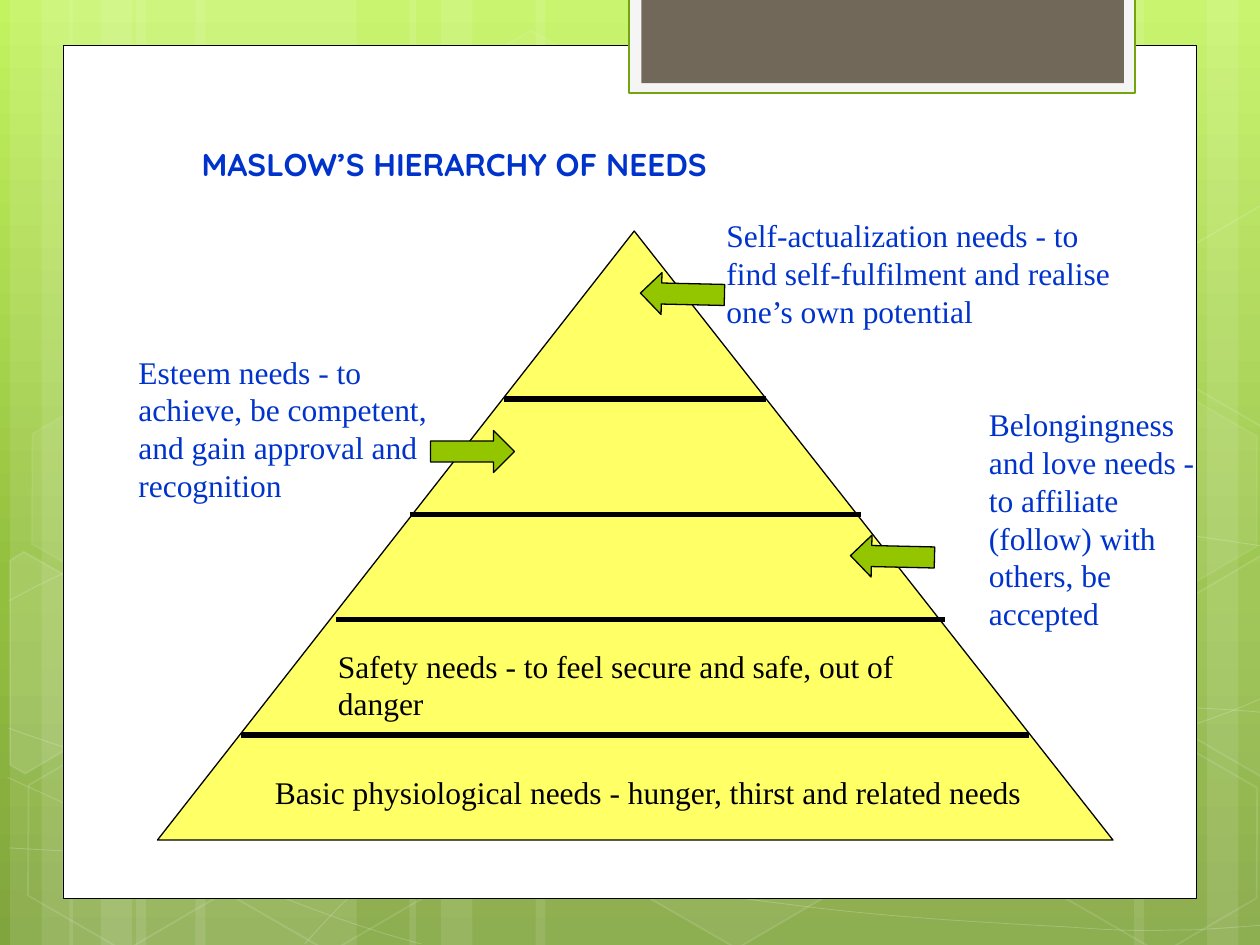
from copy import deepcopy

from lxml.etree import SubElement
from pptx import Presentation
from pptx.dml.color import RGBColor
from pptx.enum.shapes import MSO_CONNECTOR as Connector, MSO_SHAPE as Preset
from pptx.enum.text import MSO_ANCHOR as Anchor, MSO_AUTO_SIZE as AutoSize, PP_ALIGN as Align
from pptx.oxml.ns import qn
from pptx.util import Inches, Pt

WHITE = RGBColor(0xFF, 0xFF, 0xFF)
BLACK = RGBColor(0x00, 0x00, 0x00)
BLUE = RGBColor(0x00, 0x33, 0xCC)
YELLOW = RGBColor(0xFF, 0xFF, 0x66)
GREEN = RGBColor(0x94, 0xC6, 0x00)
TAB_EDGE = RGBColor(0x74, 0xA5, 0x10)
TAB_PALE = RGBColor(0xF5, 0xF5, 0xF5)
TAB_BROWN = RGBColor(0x71, 0x68, 0x5A)
BACKDROP = [(0, RGBColor(0xC3, 0xF3, 0x5F)), (0.62, RGBColor(0x93, 0xBF, 0x3F)),
            (1, RGBColor(0x81, 0xA5, 0x3E))]

STRIPES = [(1.08, 1.75), (0.08, 0.5), (0.33, 0.83), (1.55, 1.75), (0.55, 0.5), (0.8, 0.83),
           (7.33, 1.75), (9.58, 0.5), (9, 0.83), (4.25, 3.08), (3.25, 0.5), (3.5, 0.83)]
WAVES = [
    [(0.07, 6.73), (0.61, 6.76), (1.15, 6.79), (1.9, 6.78), (2.65, 6.77), (3.58, 6.75),
     (4.58, 6.65), (5.58, 6.55), (7, 6.36), (7.92, 6.17), (8.83, 5.98), (9.77, 5.68), (10.07, 5.51)],
    [(0.07, 4.77), (0.36, 4.61), (0.65, 4.46), (1.21, 4.31), (1.78, 4.16), (2.59, 3.94),
     (3.47, 3.87), (4.36, 3.8), (5.44, 3.79), (6.54, 3.87), (7.64, 3.95), (9.47, 4.26), (10.07, 4.34)],
    [(0.06, 6.17), (1.27, 6.72), (2.47, 7.27), (3.34, 7.49)],
    [(0.07, 5.78), (0.38, 5.89), (0.7, 6), (1.28, 6.16), (1.86, 6.31), (2.73, 6.56), (3.57, 6.73),
     (4.4, 6.9), (5.45, 7.08), (6.28, 7.18), (7.11, 7.29), (8, 7.33), (8.53, 7.36),
     (9.05, 7.4), (9.19, 7.38), (9.45, 7.38), (9.71, 7.37), (9.89, 7.35), (10.07, 7.34)],
    [(2.42, 7.49), (2.6, 7.29), (2.78, 7.09), (3.02, 6.91), (3.26, 6.73), (3.6, 6.53), (3.88, 6.39),
     (4.16, 6.25), (4.33, 6.19), (4.7, 6.09), (5.06, 5.99), (5.73, 5.85), (6.08, 5.78),
     (6.44, 5.71), (6.49, 5.71), (6.8, 5.69), (7.11, 5.66), (7.6, 5.63), (7.94, 5.62),
     (8.29, 5.61), (8.86, 5.62), (8.86, 5.62), (9.08, 5.62), (9.31, 5.62), (9.53, 5.62),
     (9.71, 5.63), (9.88, 5.64), (9.97, 5.65), (10.06, 5.66), (10.03, 5.65), (10.06, 5.66)],
]
HEXAGONS = [(3.34, 0.36, 4, 8), (4.97, 5.89, 6, 12), (0.11, 5.91, None, 12), (0.14, 3.12, 7, 8),
            (1.74, 5.92, None, 12), (7.53, 4.53, 10, 12), (8.34, 5.93, None, 12), (8.34, 3.14, 7, 8)]
CUT_HEXAGONS = [
    ([(0.08, 4.45), (0.19, 4.38), (0.96, 4.82), (0.95, 5.7), (0.2, 6.14), (0.08, 6.07)], 10),
    ([(9.26, 4.85), (10.01, 4.41), (10.09, 4.46), (10.09, 6.13), (10.02, 6.17), (9.26, 5.73)], 4),
    ([(9.26, 2.07), (10.01, 1.63), (10.1, 1.68), (10.09, 3.35), (10.02, 3.39), (9.26, 2.95)], None),
]
LEVEL_LINES = [(1.92, 8.17, 5.83), (2.67, 7.5, 4.92), (3.25, 6.83, 4.08), (4, 6.08, 3.17)]
NEEDS = [
    ("Basic physiological needs - hunger, thirst and related needs", (2.08, 6.08, 6.25), 0.4, BLACK),
    ("Safety needs - to feel secure and safe, out of danger", (2.58, 5.08, 4.92), 0.7, BLACK),
    ("Belongingness and love needs - to affiliate (follow) with others, be accepted",
     (7.75, 3.17, 2), 1.92, BLUE),
    ("Esteem needs - to achieve, be competent, and gain approval and recognition",
     (1, 2.75, 2.83), 1.3, BLUE),
    ("Self-actualization needs - to find self-fulfilment and realise one’s own potential",
     (5.67, 1.67, 3.33), 1, BLUE),
]
ARROWS = [(3.42, 3.42, 0), (5.08, 2.17, 181.3), (6.75, 4.25, 181.3)]


def snap(*lengths):
    """Snap lengths in inches to the diagram's grid of twelfths."""
    return [round(length * 12) / 12 for length in lengths]


def set_opacity(element, percent):
    """Set the opacity of every RGB colour inside an XML element."""
    for color in element.iter(qn("a:srgbClr")):
        SubElement(color, qn("a:alpha")).set("val", str(percent * 1000))


def style(shape, fill=None, line=None, width=1, fill_opacity=None, line_opacity=None):
    """Give a shape its fill and outline, without a shadow."""
    shape.shadow.inherit = False
    if fill is None:
        shape.fill.background()
    else:
        shape.fill.solid()
        shape.fill.fore_color.rgb = fill
        if fill_opacity:
            set_opacity(shape.element.spPr.find(qn("a:solidFill")), fill_opacity)
    if line is None:
        shape.line.fill.background()
    else:
        shape.line.color.rgb = line
        shape.line.width = Pt(width)
        if line_opacity:
            set_opacity(shape.element.spPr.find(qn("a:ln")), line_opacity)


def add_preset(slide, preset, box, **look):
    """Add a styled preset shape at a box in inches."""
    shape = slide.shapes.add_shape(preset, *map(Inches, box))
    style(shape, **look)
    return shape


def add_outline(slide, points, close, **look):
    """Add a styled freeform through points in inches."""
    start, *rest = [(Inches(x), Inches(y)) for x, y in points]
    builder = slide.shapes.build_freeform(*start)
    builder.add_line_segments(rest, close=close)
    shape = builder.convert_to_shape()
    style(shape, **look)
    return shape


def add_wave(slide, controls):
    """Add an open curve, joining each three segments into one cubic."""
    wave = add_outline(slide, controls, False, line=WHITE, width=0.5, line_opacity=20)
    outline = next(wave.element.iter(qn("a:path")))
    segments = outline.findall(qn("a:lnTo"))
    for first in range(0, len(segments), 3):
        cubic = SubElement(outline, qn("a:cubicBezTo"))
        for segment in segments[first:first + 3]:
            cubic.append(segment[0])
            outline.remove(segment)


def paint_background(slide):
    """Fill the background with a vertical green gradient."""
    fill = slide.background.fill
    fill.gradient()
    fill.gradient_angle = 270
    stop_list = next(slide.element.iter(qn("a:gsLst")))
    stop_list.insert(1, deepcopy(stop_list[0]))
    for stop, (position, color) in zip(fill.gradient_stops, BACKDROP):
        stop.position = position
        stop.color.rgb = color


def add_backdrop(slide):
    """Add the stripes, waves, hexagons, page and tab."""
    for left, width in STRIPES:
        add_preset(slide, Preset.RECTANGLE, (left, 0, width, 7.5), fill=WHITE, fill_opacity=10)
    for wave in WAVES:
        add_wave(slide, wave)
    for left, top, opacity, edge in HEXAGONS:
        hexagon = add_preset(slide, Preset.HEXAGON, (left, top, 1.75, 1.52),
                             fill=WHITE if opacity else None, fill_opacity=opacity,
                             line=WHITE, line_opacity=edge)
        hexagon.adjustments[0], hexagon.adjustments[1] = 0.285, 1.155
        hexagon.rotation = 30
    for corners, opacity in CUT_HEXAGONS:
        add_outline(slide, corners, True, fill=WHITE if opacity else None,
                    fill_opacity=opacity, line=WHITE, line_opacity=12)
    add_preset(slide, Preset.RECTANGLE, (0.5, 0.36, 9, 6.77), fill=WHITE, line=BLACK, width=0.5)
    add_preset(slide, Preset.RECTANGLE, (4.99, -0.02, 4.02, 0.76),
               fill=TAB_PALE, line=TAB_EDGE, width=1.25)
    add_preset(slide, Preset.RECTANGLE, (5.09, -0.02, 3.83, 0.68), fill=TAB_BROWN)


def write(frame, text, font_name, color, bold=False):
    """Write one left-aligned 18 point run in a wrapping frame."""
    frame.word_wrap = True
    paragraph = frame.paragraphs[0]
    paragraph.alignment = Align.LEFT
    run = paragraph.add_run()
    run.text = text
    run.font.name, run.font.size, run.font.bold = font_name, Pt(18), bold
    run.font.color.rgb = color


def set_title(slide, text):
    """Place the title in front of the backdrop."""
    title = slide.shapes.title
    title.left, title.top, title.width, title.height = map(Inches, (1.5, 1.08, 8.5, 0.42))
    title.text_frame.auto_size = AutoSize.NONE
    title.text_frame.vertical_anchor = Anchor.BOTTOM
    write(title.text_frame, text, "Quicksand", BLUE, bold=True)
    title.element.getparent().append(title.element)


def add_level_line(slide, left, right, height):
    """Add a thick line between two levels of the pyramid."""
    level = slide.shapes.add_connector(
        Connector.STRAIGHT, *map(Inches, snap(left, height, right, height)))
    level.line.color.rgb = BLACK
    level.line.width = Pt(3)
    SubElement(level.element.spPr, qn("a:effectLst"))


def add_need(slide, text, place, height, color):
    """Add the description of one need."""
    need = slide.shapes.add_textbox(*map(Inches, (*snap(*place), height)))
    need.text_frame.auto_size = AutoSize.SHAPE_TO_FIT_TEXT
    write(need.text_frame, text, "Times New Roman", color)


def main():
    """Build the slide and save it."""
    deck = Presentation()
    deck.slide_width, deck.slide_height = Inches(10), Inches(7.5)
    slide = deck.slides.add_slide(deck.slide_layouts[5])
    paint_background(slide)
    add_backdrop(slide)
    set_title(slide, "MASLOW’S HIERARCHY OF NEEDS")
    pyramid = add_preset(slide, Preset.ISOSCELES_TRIANGLE, snap(1.25, 1.83, 7.58, 4.83),
                         fill=YELLOW, line=BLACK, width=0.75)
    pyramid.adjustments[0] = 0.499
    for level in LEVEL_LINES:
        add_level_line(slide, *level)
    for need in NEEDS:
        add_need(slide, *need)
    for left, top, rotation in ARROWS:
        arrow = add_preset(slide, Preset.RIGHT_ARROW, snap(left, top, 0.67, 0.33),
                           fill=GREEN, line=BLACK, width=0.75)
        arrow.rotation = rotation
    deck.save("out.pptx")


if __name__ == "__main__":
    main()
